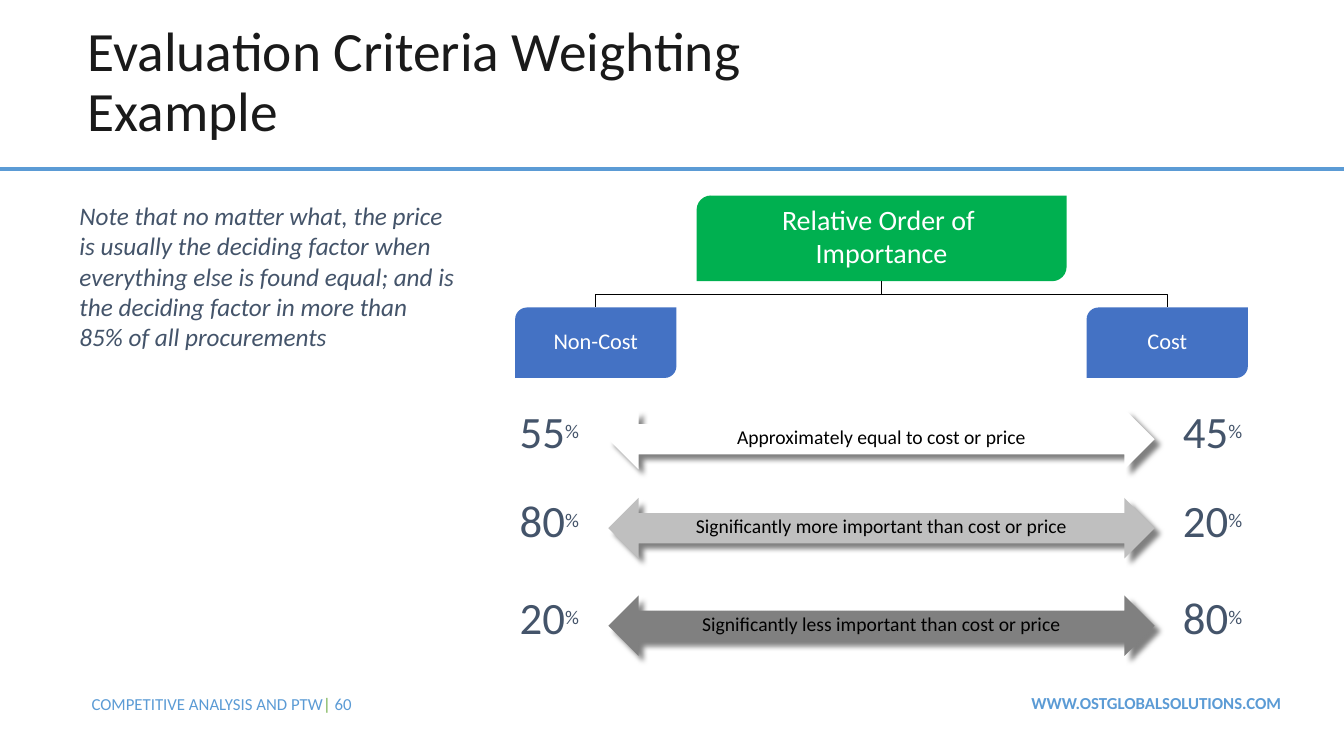
from dataclasses import dataclass

from lxml import etree
from pptx import Presentation
from pptx import util as u
from pptx.dml.color import RGBColor
from pptx.enum import shapes, text
from pptx.oxml.ns import qn

WHITE = RGBColor(0xFF, 0xFF, 0xFF)
BLACK = RGBColor(0x00, 0x00, 0x00)
INK = RGBColor(0x1A, 0x1A, 0x1A)
SLATE = RGBColor(0x44, 0x54, 0x6A)
SKY = RGBColor(0x5B, 0x9B, 0xD5)
BLUE = RGBColor(0x44, 0x72, 0xC4)
GREEN = RGBColor(0x00, 0xB0, 0x50)
LEAF = RGBColor(0x70, 0xAD, 0x47)
SILVER = RGBColor(0xBF, 0xBF, 0xBF)
GREY = RGBColor(0x80, 0x80, 0x80)

FONT = "Calibri"
SLIDE_WIDTH, SLIDE_HEIGHT = u.Inches(13.333), u.Inches(7.5)
CENTRE = 65.59
BRANCH = 21.26
ROOT_TOP, ROOT_HEIGHT = 25.87, 11.33
NODE_TOP, NODE_WIDTH, NODE_HEIGHT = 40.67, 12, 9.33
ARROW_WIDTH, ARROW_HEIGHT = 40.65, 8
PERCENT_RISE = 1.17
NON_COST_COLUMN, COST_COLUMN = 40.88, 90.23


def across(share: float) -> int:
    return round(SLIDE_WIDTH * share / 100)


def down(share: float) -> int:
    return round(SLIDE_HEIGHT * share / 100)


@dataclass(frozen=True)
class Area:
    left: float
    top: float
    width: float
    height: float

    def lengths(self) -> tuple[int, int, int, int]:
        return across(self.left), down(self.top), across(self.width), down(self.height)


@dataclass(frozen=True)
class Piece:
    words: str
    size: float
    color: RGBColor
    bold: bool = False
    italic: bool = False
    raised: bool = False


@dataclass(frozen=True)
class Node:
    label: str
    side: int


@dataclass(frozen=True)
class Comparison:
    middle: float
    non_cost: int
    cost: int
    label: str
    fill: RGBColor


NODES = [Node("Non-Cost", -1), Node("Cost", 1)]
COMPARISONS = [
    Comparison(58.1, 55, 45, "Approximately equal to cost or price", WHITE),
    Comparison(69.87, 80, 20, "Significantly more important than cost or price", SILVER),
    Comparison(82.77, 20, 80, "Significantly less important than cost or price", GREY),
]


def centred(middle_x: float, middle_y: float, width: float, height: float) -> Area:
    return Area(middle_x - width / 2, middle_y - height / 2, width, height)


def write(frame, lines: list[list[Piece]], align=text.PP_ALIGN.LEFT) -> None:
    for index, pieces in enumerate(lines):
        paragraph = frame.add_paragraph() if index else frame.paragraphs[0]
        paragraph.alignment = align
        for piece in pieces:
            run = paragraph.add_run()
            run.text = piece.words
            run.font.name = FONT
            run.font.size = u.Pt(piece.size)
            run.font.color.rgb = piece.color
            run.font.bold = piece.bold
            run.font.italic = piece.italic
            if piece.raised:
                run.font._element.set("baseline", "30000")


def add_text(slide, area: Area, pieces: list[Piece], align=text.PP_ALIGN.LEFT,
             anchor=text.MSO_ANCHOR.TOP, wrap: bool = True):
    frame = slide.shapes.add_textbox(*area.lengths()).text_frame
    frame.word_wrap = wrap
    frame.vertical_anchor = anchor
    write(frame, [pieces], align)
    return frame


def add_solid(slide, kind, area: Area, fill: RGBColor):
    shape = slide.shapes.add_shape(kind, *area.lengths())
    shape.shadow.inherit = False
    shape.fill.solid()
    shape.fill.fore_color.rgb = fill
    shape.line.fill.background()
    return shape


def add_box(slide, area: Area, fill: RGBColor, labels: list[str], size: float) -> None:
    shape = add_solid(slide, shapes.MSO_SHAPE.ROUND_2_DIAG_RECTANGLE, area, fill)
    frame = shape.text_frame
    frame.word_wrap = False
    frame.vertical_anchor = text.MSO_ANCHOR.MIDDLE
    frame.margin_top = 0
    write(frame, [[Piece(label, size, WHITE)] for label in labels], text.PP_ALIGN.CENTER)


def add_line(slide, kind, ends: tuple[int, int, int, int], color: RGBColor, width: float):
    connector = slide.shapes.add_connector(kind, *ends)
    connector.line.color.rgb = color
    connector.line.width = u.Pt(width)
    etree.SubElement(connector._element.spPr, qn("a:effectLst"))
    return connector


def add_branch(slide, side: int) -> None:
    root_bottom = down(ROOT_TOP + ROOT_HEIGHT)
    drop, run = down(NODE_TOP) - root_bottom, across(BRANCH)
    middle_x = across(CENTRE + side * BRANCH / 2)
    middle_y = root_bottom + drop // 2
    ends = (middle_x + side * drop // 2, middle_y - run // 2,
            middle_x - side * drop // 2, middle_y + run // 2)
    connector = add_line(slide, shapes.MSO_CONNECTOR.ELBOW, ends, BLACK, 1)
    turn = 90 if side < 0 else 270
    connector._element.spPr.find(qn("a:xfrm")).set("rot", str(turn * 60000))


def cast_shadow(shape) -> None:
    effects = shape._element.spPr.find(qn("a:effectLst"))
    shadow = etree.SubElement(effects, qn("a:outerShdw"), blurRad=str(u.Pt(4)),
                              dist=str(u.Pt(5)), dir=str(45 * 60000),
                              algn="tl", rotWithShape="0")
    color = etree.SubElement(shadow, qn("a:srgbClr"), val=str(BLACK))
    etree.SubElement(color, qn("a:alpha"), val="50000")


def add_comparison(slide, comparison: Comparison) -> None:
    for column, value in ((NON_COST_COLUMN, comparison.non_cost), (COST_COLUMN, comparison.cost)):
        area = centred(column, comparison.middle - PERCENT_RISE, 6.15, 8.53)
        pieces = [Piece(str(value), 32, SLATE), Piece("%", 24, SLATE, raised=True)]
        add_text(slide, area, pieces, text.PP_ALIGN.CENTER, text.MSO_ANCHOR.MIDDLE, False)
    arrow_area = centred(CENTRE, comparison.middle, ARROW_WIDTH, ARROW_HEIGHT)
    cast_shadow(add_solid(slide, shapes.MSO_SHAPE.LEFT_RIGHT_ARROW, arrow_area, comparison.fill))
    label_area = centred(CENTRE, comparison.middle, ARROW_WIDTH, 3.87)
    frame = add_text(slide, label_area, [Piece(comparison.label, 14, BLACK)],
                     text.PP_ALIGN.CENTER, text.MSO_ANCHOR.MIDDLE)
    frame.margin_left = frame.margin_right = frame.margin_top = 0


def main() -> None:
    presentation = Presentation()
    presentation.slide_width, presentation.slide_height = SLIDE_WIDTH, SLIDE_HEIGHT
    slide = presentation.slides.add_slide(presentation.slide_layouts[6])

    rule_ends = (0, down(22.33), SLIDE_WIDTH, down(22.33))
    add_line(slide, shapes.MSO_CONNECTOR.STRAIGHT, rule_ends, SKY, 3)
    add_text(slide, Area(70.43, 90.93, 25.65, 4),
             [Piece("WWW.OSTGLOBALSOLUTIONS.COM", 12, SKY, bold=True)], text.PP_ALIGN.RIGHT)
    add_text(slide, Area(6.08, 91.07, 36.15, 4),
             [Piece("COMPETITIVE ANALYSIS AND PTW", 12, SKY), Piece("| ", 12, LEAF),
              Piece("60", 12, SKY)])
    title = add_text(slide, Area(5.78, 3.87, 64.28, 14.4),
                     [Piece("Evaluation Criteria Weighting Example", 39.6, INK)],
                     anchor=text.MSO_ANCHOR.MIDDLE)
    title.paragraphs[0].line_spacing = 0.9

    add_box(slide, Area(51.83, ROOT_TOP, 27.53, ROOT_HEIGHT), GREEN,
            ["Relative Order of ", "Importance"], 20)
    for node in NODES:
        add_branch(slide, node.side)
        left = CENTRE + node.side * BRANCH - NODE_WIDTH / 2
        add_box(slide, Area(left, NODE_TOP, NODE_WIDTH, NODE_HEIGHT), BLUE, [node.label], 16)
    for comparison in COMPARISONS:
        add_comparison(slide, comparison)

    note = ("Note that no matter what, the price is usually the deciding factor when everything "
            "else is found equal; and is the deciding factor in more than 85% of all procurements")
    add_text(slide, Area(5.18, 25.87, 29.48, 21.6), [Piece(note, 18, SLATE, italic=True)])
    presentation.save("out.pptx")


if __name__ == "__main__":
    main()
